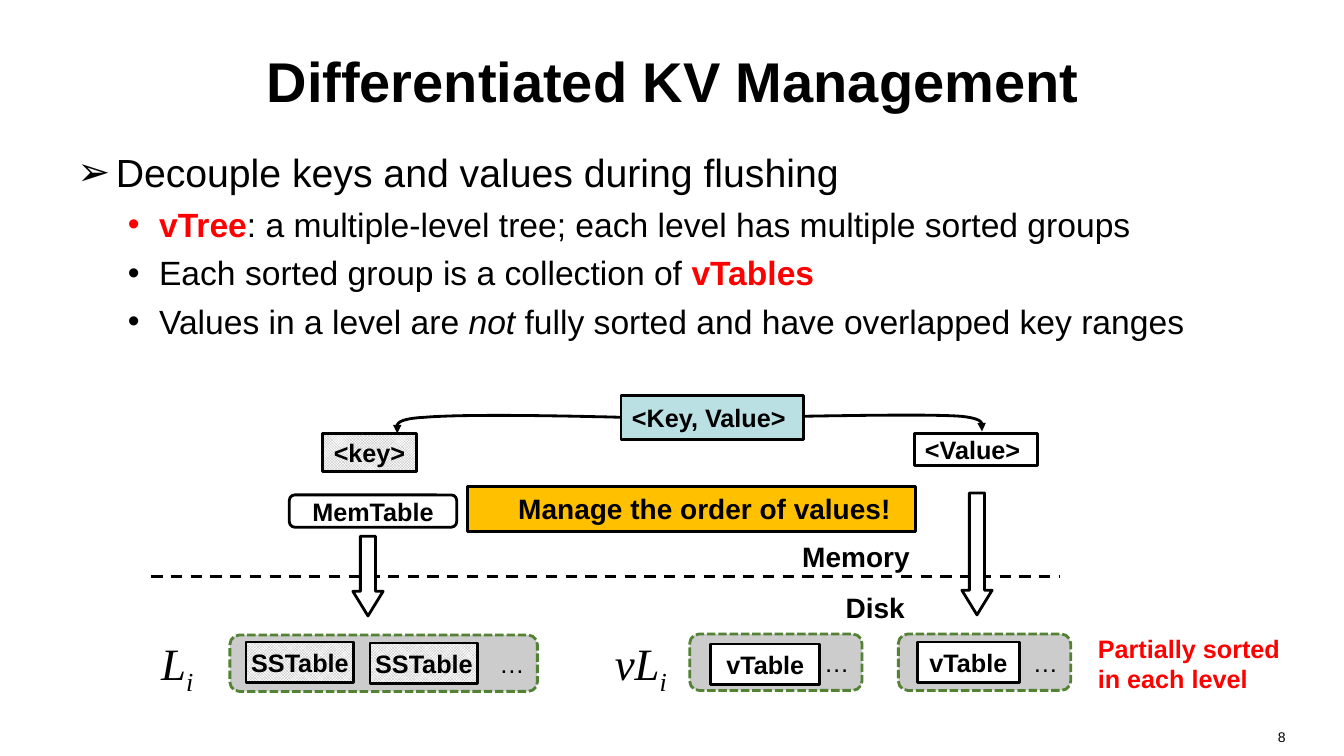
from dataclasses import dataclass

from lxml.etree import SubElement
from pptx import Presentation
from pptx.dml.color import RGBColor
from pptx.enum.dml import MSO_LINE as Dash, MSO_PATTERN_TYPE as Pattern
from pptx.enum.shapes import MSO_CONNECTOR as Connector, MSO_SHAPE as Shape
from pptx.enum.text import MSO_ANCHOR as Anchor, PP_ALIGN as Align
from pptx.oxml.ns import qn
from pptx.util import Inches, Pt


@dataclass(frozen=True)
class Theme:
    black: str = "000000"
    white: str = "FFFFFF"
    red: str = "FF0000"
    group: str = "CCCCCC"
    group_edge: str = "548235"
    checker: str = "B3B3B3"
    pair: str = "BBE0E3"
    banner: str = "FFC000"
    font: str = "Arial"
    math_font: str = "Times New Roman"
    title: int = 40
    level: int = 32
    heading: int = 28
    bullet: int = 24
    caption: int = 20
    label: int = 18
    footer: int = 10
    edge: int = 2


THEME = Theme()


def color(value):
    return RGBColor.from_string(value)


def style(run, size, tone=THEME.black, bold=False, italic=False, font=THEME.font):
    run.font.name = font
    run.font.size = Pt(size)
    run.font.bold = bold
    run.font.italic = italic
    run.font.color.rgb = color(tone)


def write(shape, text, size, align=Align.CENTER, anchor=Anchor.MIDDLE, inset=0.1, **look):
    frame = shape.text_frame
    frame.word_wrap = True
    frame.vertical_anchor = anchor
    frame.margin_left = frame.margin_right = Inches(inset)
    frame.text = text
    paragraph = frame.paragraphs[0]
    paragraph.alignment = align
    style(paragraph.runs[0], size, **look)
    return paragraph


def textbox(slide, box):
    area = slide.shapes.add_textbox(*map(Inches, box))
    area.text_frame.word_wrap = True
    return area


def caption(slide, box, text, size, align=Align.CENTER, anchor=Anchor.TOP, **look):
    return write(textbox(slide, box), text, size, align, anchor, **look)


def outline(shape, tone=THEME.black, dash=None):
    shape.shadow.inherit = False
    shape.line.color.rgb = color(tone)
    shape.line.width = Pt(THEME.edge)
    if dash:
        shape.line.dash_style = dash


def block(slide, kind, box, fill=THEME.white, adjust=()):
    shape = slide.shapes.add_shape(kind, *map(Inches, box))
    for index, value in enumerate(adjust):
        shape.adjustments[index] = value
    if fill == THEME.checker:
        shape.fill.patterned()
        shape.fill.pattern = Pattern.SMALL_CHECKER_BOARD
        shape.fill.fore_color.rgb = color(fill)
        shape.fill.back_color.rgb = color(THEME.white)
    else:
        shape.fill.solid()
        shape.fill.fore_color.rgb = color(fill)
    outline(shape)
    return shape


def sorted_group(slide, box):
    group = block(slide, Shape.ROUNDED_RECTANGLE, box, THEME.group)
    outline(group, THEME.group_edge, Dash.SQUARE_DOT)
    write(group, "…", THEME.label, Align.RIGHT)


def table_file(slide, box, name, fill=THEME.white):
    file = block(slide, Shape.ROUNDED_RECTANGLE, box, fill, [0])
    write(file, name, THEME.label, inset=0, bold=True)


def named_block(slide, kind, box, name, fill=THEME.white):
    write(block(slide, kind, box, fill), name, THEME.label, bold=True)


def flush_arrow(slide, box):
    block(slide, Shape.DOWN_ARROW, box, adjust=[0.5, 0.813])


def level_name(slide, box, name):
    paragraph = caption(slide, box, name, THEME.level, Align.LEFT,
                        italic=True, font=THEME.math_font)
    index = paragraph.add_run()
    index.text = "i"
    style(index, THEME.level, italic=True, font=THEME.math_font)
    index.font._element.set("baseline", "-25000")


def bezier(points, steps=16):
    for step in range(1, steps + 1):
        t = step / steps
        weights = ((1 - t) ** 3, 3 * t * (1 - t) ** 2, 3 * t ** 2 * (1 - t), t ** 3)
        yield tuple(Inches(sum(w * p[axis] for w, p in zip(weights, points)))
                    for axis in (0, 1))


def curved_arrow(slide, points):
    builder = slide.shapes.build_freeform(*map(Inches, points[0]))
    for first in range(0, len(points) - 1, 3):
        builder.add_line_segments(list(bezier(points[first:first + 4])), close=False)
    curve = builder.convert_to_shape()
    curve.fill.background()
    outline(curve)
    SubElement(curve.line._get_or_add_ln(), qn("a:tailEnd"), type="triangle")


def boundary(slide, left, right, height):
    ends = map(Inches, (left, height, right, height))
    line = slide.shapes.add_connector(Connector.STRAIGHT, *ends)
    line.line.color.rgb = color(THEME.black)
    line.line.width = Pt(THEME.edge)
    line.line.dash_style = Dash.DASH
    SubElement(line._element.spPr, qn("a:effectLst"))


def bullet(paragraph, mark, left, hanging):
    properties = paragraph._p.get_or_add_pPr()
    properties.set("marL", str(Inches(left)))
    properties.set("indent", str(-Inches(hanging)))
    SubElement(properties, qn("a:buFont"), typeface=THEME.font)
    SubElement(properties, qn("a:buChar"), char=mark)


def outline_text(slide):
    key_term = dict(tone=THEME.red, bold=True)
    points = [
        [("vTree", key_term),
         (": a multiple-level tree; each level has multiple sorted groups", {})],
        [("Each sorted group is a collection of ", {}), ("vTables", key_term)],
        [("Values in a level are ", {}), ("not", dict(italic=True)),
         (" fully sorted and have overlapped key ranges", {})],
    ]
    body = textbox(slide, (0.67, 1.42, 12, 2.19))
    heading = write(body, "Decouple keys and values during flushing", THEME.heading,
                    Align.LEFT, Anchor.TOP)
    bullet(heading, "➢", 0.38, 0.38)
    for pieces in points:
        point = body.text_frame.add_paragraph()
        point.level = 1
        point.space_before = Pt(6)
        bullet(point, "•", 0.81, 0.31)
        for text, look in pieces:
            run = point.add_run()
            run.text = text
            style(run, THEME.bullet, **look)


def memory_part(slide):
    named_block(slide, Shape.ROUNDED_RECTANGLE, (2.87, 4.91, 1.66, 0.32), "MemTable")
    named_block(slide, Shape.RECTANGLE, (6.16, 3.92, 1.81, 0.44), "<Key, Value> ", THEME.pair)
    named_block(slide, Shape.RECTANGLE, (9.07, 4.3, 1.22, 0.32), "<Value> ")
    named_block(slide, Shape.RECTANGLE, (3.2, 4.3, 0.93, 0.38), "<key> ", THEME.checker)
    curved_arrow(slide, [(6.16, 4.14), (5.37, 4.12), (4.58, 4.11), (4.21, 4.14),
                         (3.84, 4.16), (3.96, 4.25), (3.94, 4.3)])
    curved_arrow(slide, [(7.97, 4.13), (8.6, 4.12), (9.23, 4.11), (9.53, 4.13),
                         (9.82, 4.16), (9.72, 4.23), (9.74, 4.28)])
    banner = block(slide, Shape.RECTANGLE, (4.64, 4.83, 4.44, 0.44), THEME.banner)
    message = write(banner, "Manage the order of values!", THEME.caption, Align.LEFT,
                    Anchor.TOP, inset=0, bold=True)
    message._p.get_or_add_pPr().set("marL", str(Inches(0.5)))


def disk_part(slide):
    for box in ((8.91, 6.29, 1.71, 0.56), (6.84, 6.29, 1.71, 0.56), (2.28, 6.3, 3.05, 0.56)):
        sorted_group(slide, box)
    for left, top in ((2.44, 6.37), (3.67, 6.38)):
        table_file(slide, (left, top, 1.07, 0.4), "SSTable", THEME.checker)
    for box in ((7.05, 6.39, 1.08, 0.4), (9.1, 6.37, 1.01, 0.4)):
        table_file(slide, box, "vTable")
    for left, name in ((1.5, "L"), (6, "vL")):
        level_name(slide, (left, 6.26, 0.92, 0.64), name)
    caption(slide, (10.79, 6.23, 2.21, 0.71), "Partially sorted in each level",
            THEME.label, Align.LEFT, tone=THEME.red, bold=True)


def main():
    deck = Presentation()
    deck.slide_width, deck.slide_height = Inches(13.33), Inches(7.5)
    slide = deck.slides.add_slide(deck.slide_layouts[6])
    caption(slide, (0.67, 0.17, 12, 1.25), "Differentiated KV Management", THEME.title,
            anchor=Anchor.MIDDLE, bold=True)
    outline_text(slide)
    disk_part(slide)
    caption(slide, (7.81, 5.3, 1.36, 0.44), "Memory", THEME.caption, bold=True)
    caption(slide, (8.14, 5.81, 1.08, 0.44), "Disk", THEME.caption, bold=True)
    boundary(slide, 1.5, 10.51, 5.72)
    memory_part(slide)
    flush_arrow(slide, (3.5, 5.32, 0.3, 0.79))
    flush_arrow(slide, (9.54, 4.89, 0.3, 1.21))
    caption(slide, (9.74, 7.18, 3.11, 0.35), "8", THEME.footer, Align.RIGHT)
    deck.save("out.pptx")


if __name__ == "__main__":
    main()
